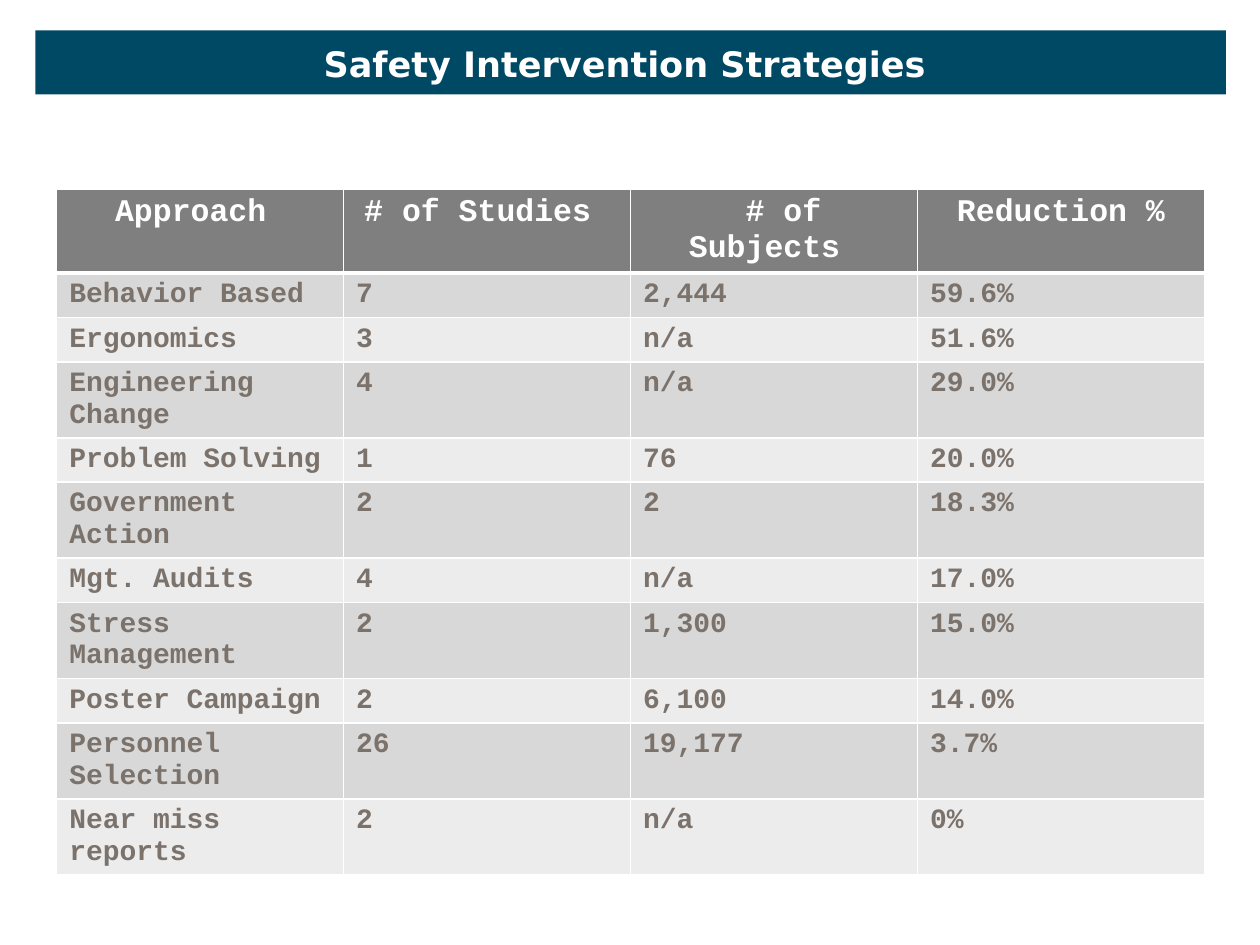
from lxml.etree import SubElement
from pptx import Presentation
from pptx.dml.color import RGBColor
from pptx.enum.shapes import MSO_SHAPE
from pptx.enum.text import MSO_ANCHOR, PP_ALIGN
from pptx.oxml.ns import qn
from pptx.util import Inches, Pt

HEADERS = ["Approach ", "# of Studies ", " # of Subjects ", "Reduction %"]
STRATEGIES = [
    ["Behavior Based", "7", "2,444", "59.6%"],
    ["Ergonomics", "3", "n/a", "51.6%"],
    ["Engineering Change", "4", "n/a", "29.0%"],
    ["Problem Solving", "1", "76", "20.0%"],
    ["Government Action", "2", "2", "18.3%"],
    ["Mgt. Audits", "4", "n/a", "17.0%"],
    ["Stress Management", "2", "1,300", "15.0%"],
    ["Poster Campaign", "2", "6,100", "14.0%"],
    ["Personnel Selection", "26", "19,177", "3.7%"],
    ["Near miss reports", "2", "n/a", "0%"],
]
WHITE = "FFFFFF"


def set_fill(fill, color):
    fill.solid()
    fill.fore_color.rgb = RGBColor.from_string(color)


def write_text(frame, text, *, font, size, color, align=PP_ALIGN.LEFT):
    paragraph = frame.paragraphs[0]
    paragraph.alignment = align
    run = paragraph.add_run()
    run.text = text
    run.font.name = font
    run.font.size = Pt(size)
    run.font.bold = True
    run.font.color.rgb = RGBColor.from_string(color)


def set_borders(cell, bottom_width):
    properties = cell._tc.get_or_add_tcPr()
    widths = {"a:lnL": 1, "a:lnR": 1, "a:lnT": 1, "a:lnB": bottom_width}
    for tag, width in widths.items():
        line = SubElement(properties, qn(tag), w=str(Pt(width)))
        solid = SubElement(line, qn("a:solidFill"))
        SubElement(solid, qn("a:srgbClr"), val=WHITE)


def add_title_band(slide, left, top, width, height):
    band = slide.shapes.add_shape(MSO_SHAPE.RECTANGLE, left, top, width, height)
    band.shadow.inherit = False
    band.line.fill.background()
    set_fill(band.fill, "004964")
    title = slide.shapes.title
    title._element.addprevious(band._element)
    title.left, title.top = left + Inches(2.18), top + Inches(0.05)
    title.width, title.height = Inches(5), Inches(0.44)
    title.text_frame.word_wrap = False
    title.text_frame.vertical_anchor = MSO_ANCHOR.TOP
    write_text(title.text_frame, "Safety Intervention Strategies",
               font="DejaVu Sans", size=20, color=WHITE, align=PP_ALIGN.CENTER)


def add_strategy_table(slide, left, top, width, height):
    rows = [HEADERS] + STRATEGIES
    table = slide.shapes.add_table(
        len(rows), len(HEADERS), left, top, width, height).table
    header_height = Inches(0.66)
    for row_index, values in enumerate(rows):
        is_header = row_index == 0
        table.rows[row_index].height = header_height if is_header else Inches(0.35)
        if is_header:
            fill, size, color, align = "7F7F7F", 18, WHITE, PP_ALIGN.CENTER
        else:
            fill = "D8D8D8" if row_index % 2 else "ECECEC"
            size, color, align = 16, "7B726B", PP_ALIGN.LEFT
        for column_index, value in enumerate(values):
            cell = table.cell(row_index, column_index)
            set_borders(cell, 3 if is_header else 1)
            set_fill(cell.fill, fill)
            write_text(cell.text_frame, value, font="Courier New",
                       size=size, color=color, align=align)


def main():
    presentation = Presentation()
    presentation.slide_width, presentation.slide_height = Inches(10), Inches(7.5)
    slide = presentation.slides.add_slide(presentation.slide_layouts[5])
    add_title_band(slide, Inches(0.28), Inches(0.24), Inches(9.45), Inches(0.51))
    add_strategy_table(slide, Inches(0.45), Inches(1.5), Inches(9.11), Inches(5.13))
    presentation.save("out.pptx")


if __name__ == "__main__":
    main()
